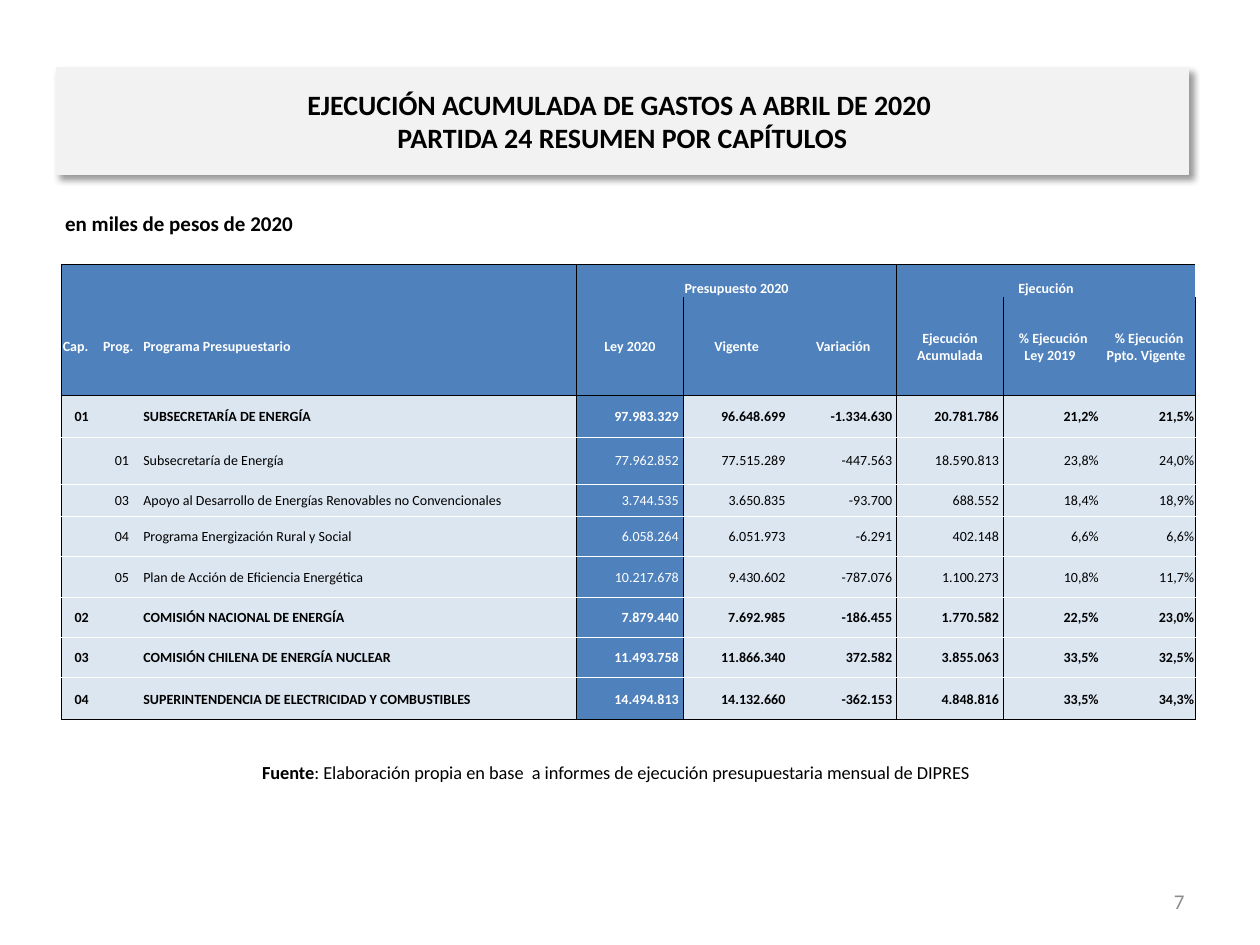
from dataclasses import dataclass

from lxml.etree import SubElement
from pptx import Presentation
from pptx.dml.color import RGBColor as Color
from pptx.enum.shapes import MSO_SHAPE as Shape
from pptx.enum.text import MSO_ANCHOR as Anchor, PP_ALIGN as Align
from pptx.oxml.ns import qn
from pptx.util import Pt


@dataclass(frozen=True)
class Theme:
    font: str = "Calibri"
    black: str = "000000"
    white: str = "FFFFFF"
    grey: str = "8C8C8C"
    panel: str = "F2F2F2"
    blue: str = "4F81BD"
    pale: str = "DCE6F1"
    title: float = 16
    note: float = 12
    source: float = 10.5
    cell: float = 8
    border: float = 0.5


@dataclass(frozen=True)
class Box:
    left: float
    top: float
    width: float
    height: float

    def lengths(self) -> tuple:
        return Pt(self.left), Pt(self.top), Pt(self.width), Pt(self.height)


@dataclass(frozen=True)
class Budget:
    chapter: str
    program: str
    name: str
    figures: str
    height: float

    def texts(self) -> list[str]:
        amounts = self.figures.split()
        padded = [f"{amount} " for amount in amounts[:4]]
        return [self.chapter, self.program, self.name, *padded, *amounts[4:]]


THEME = Theme()
NO_STYLE = "{2D5ABB26-0587-4C30-8999-92F81FD0307C}"
COLUMNS = [23, 23, 248.3, 61, 61, 61, 61, 55.2, 54.5]
HEADER_HEIGHTS = [18.8, 56]
GROUP = 3
LAW_COLUMN = 3
GROUPS = ["", "Presupuesto 2020", "Ejecución"]
HEADINGS = ["Cap.", "Prog.", "Programa Presupuestario", "Ley 2020", "Vigente", "Variación",
            "Ejecución Acumulada", " % Ejecución Ley 2019 ", " % Ejecución Ppto. Vigente "]
BUDGETS = [
    Budget("01", "", "SUBSECRETARÍA DE ENERGÍA",
           "97.983.329 96.648.699 -1.334.630 20.781.786 21,2% 21,5%", 23.8),
    Budget("", "01", "Subsecretaría de Energía",
           "77.962.852 77.515.289 -447.563 18.590.813 23,8% 24,0%", 26.8),
    Budget("", "03", "Apoyo al Desarrollo de Energías Renovables no Convencionales",
           "3.744.535 3.650.835 -93.700 688.552 18,4% 18,9%", 18.4),
    Budget("", "04", "Programa Energización Rural y Social",
           "6.058.264 6.051.973 -6.291 402.148 6,6% 6,6%", 23.1),
    Budget("", "05", "Plan de Acción de Eficiencia Energética",
           "10.217.678 9.430.602 -787.076 1.100.273 10,8% 11,7%", 23.1),
    Budget("02", "", "COMISIÓN NACIONAL DE ENERGÍA",
           "7.879.440 7.692.985 -186.455 1.770.582 22,5% 23,0%", 23.1),
    Budget("03", "", "COMISIÓN CHILENA DE ENERGÍA NUCLEAR",
           "11.493.758 11.866.340 372.582 3.855.063 33,5% 32,5%", 23.1),
    Budget("04", "", "SUPERINTENDENCIA DE ELECTRICIDAD Y COMBUSTIBLES",
           "14.494.813 14.132.660 -362.153 4.848.816 33,5% 34,3%", 24),
]


def style_paragraph(para, size: float, color: str, align: Align, bold: bool = False) -> None:
    para.alignment = align
    para.font.name = THEME.font
    para.font.size = Pt(size)
    para.font.bold = bold
    para.font.color.rgb = Color.from_string(color)


def add_text(page, box: Box, text: str, size: float, color: str,
             align: Align, bold: bool = False, anchor: Anchor = Anchor.TOP):
    frame = page.shapes.add_textbox(*box.lengths()).text_frame
    frame.word_wrap = True
    frame.vertical_anchor = anchor
    para = frame.paragraphs[0]
    para.text = text
    style_paragraph(para, size, color, align, bold)
    return para


def add_title(page, box: Box, text: str) -> None:
    panel = page.shapes.add_shape(Shape.RECTANGLE, *box.lengths())
    panel.fill.solid()
    panel.fill.fore_color.rgb = Color.from_string(THEME.panel)
    panel.line.color.rgb = Color.from_string(THEME.panel)
    panel.line.width = Pt(0.75)
    panel.shadow.inherit = False
    effects = panel._element.spPr.find(qn("a:effectLst"))
    shadow = SubElement(effects, qn("a:outerShdw"), blurRad=str(Pt(4)), dist=str(Pt(3)),
                        dir="2700000", algn="tl", rotWithShape="0")
    shade = SubElement(shadow, qn("a:srgbClr"), val=THEME.black)
    SubElement(shade, qn("a:alpha"), val="40000")
    frame = panel.text_frame
    frame.word_wrap = True
    frame.vertical_anchor = Anchor.MIDDLE
    para = frame.paragraphs[0]
    para.text = text
    style_paragraph(para, THEME.title, THEME.black, Align.CENTER, True)


def set_borders(cell, sides: dict[str, str]) -> None:
    properties = cell._tc.get_or_add_tcPr()
    for position, side in enumerate(side for side in "LRTB" if side in sides):
        line = SubElement(properties, qn(f"a:ln{side}"), w=str(Pt(THEME.border)))
        SubElement(SubElement(line, qn("a:solidFill")), qn("a:srgbClr"), val=sides[side])
        properties.insert(position, line)


def border_sides(row: int, column: int, last_row: int) -> dict[str, str]:
    sides = {}
    if column % GROUP == 0:
        sides["L"] = THEME.black
    if column % GROUP == GROUP - 1:
        sides["R"] = THEME.black
    if row != 1:
        sides["T"] = THEME.black if row in (0, 2) else THEME.white
    if row != 0:
        sides["B"] = THEME.black if row in (1, last_row) else THEME.white
    return sides


def fill_cell(cell, text: str, fill: str, color: str, align: Align,
              bold: bool, anchor: Anchor) -> None:
    cell.margin_left = cell.margin_right = cell.margin_top = Pt(0.7)
    cell.margin_bottom = Pt(0)
    cell.vertical_anchor = anchor
    cell.fill.solid()
    cell.fill.fore_color.rgb = Color.from_string(fill)
    para = cell.text_frame.paragraphs[0]
    para.text = text
    style_paragraph(para, THEME.cell, color, align, bold)


def add_budget_table(page, left: float, top: float) -> None:
    heights = HEADER_HEIGHTS + [budget.height for budget in BUDGETS]
    box = Box(left, top, sum(COLUMNS), sum(heights))
    table = page.shapes.add_table(len(heights), len(COLUMNS), *box.lengths()).table
    table.first_row = table.horz_banding = False
    table._tbl.tblPr.find(qn("a:tableStyleId")).text = NO_STYLE
    for column, width in zip(table.columns, COLUMNS):
        column.width = Pt(width)
    for row, height in zip(table.rows, heights):
        row.height = Pt(height)

    for column in range(len(COLUMNS)):
        group = GROUPS[column // GROUP] if column % GROUP == 0 else ""
        fill_cell(table.cell(0, column), group, THEME.blue, THEME.white,
                  Align.CENTER, True, Anchor.BOTTOM)
        fill_cell(table.cell(1, column), HEADINGS[column], THEME.blue, THEME.white,
                  Align.LEFT if column < GROUP else Align.CENTER, True, Anchor.MIDDLE)

    aligns = [Align.CENTER, Align.CENTER, Align.JUSTIFY] + [Align.RIGHT] * 6
    for row, budget in enumerate(BUDGETS, start=len(HEADER_HEIGHTS)):
        for column, text in enumerate(budget.texts()):
            law = column == LAW_COLUMN
            fill_cell(table.cell(row, column), text, THEME.blue if law else THEME.pale,
                      THEME.white if law else THEME.black, aligns[column],
                      bool(budget.chapter), Anchor.MIDDLE)

    for row in range(len(heights)):
        for column in range(len(COLUMNS)):
            set_borders(table.cell(row, column), border_sides(row, column, len(heights) - 1))
    for start in (GROUP, 2 * GROUP):
        table.cell(0, start).merge(table.cell(0, start + GROUP - 1))


def main() -> None:
    deck = Presentation()
    deck.slide_width, deck.slide_height = Pt(720), Pt(540)
    page = deck.slides.add_slide(deck.slide_layouts[6])
    add_text(page, Box(516.2, 500.4, 167.8, 28.8), "7", THEME.note, THEME.grey,
             Align.RIGHT, anchor=Anchor.MIDDLE)
    source = add_text(page, Box(30.2, 431.3, 643.7, 20.9), "", THEME.source,
                      THEME.black, Align.CENTER)
    label = source.add_run()
    label.text = "Fuente"
    label.font.bold = True
    span = source.add_run()
    span.text = (": Elaboración propia en base  a informes de ejecución "
                 "presupuestaria mensual de DIPRES")
    add_text(page, Box(30.2, 116.6, 540, 26.6), "en miles de pesos de 2020",
             THEME.note, THEME.black, Align.LEFT, True)
    add_title(page, Box(32.4, 38.5, 646.6, 61),
              "EJECUCIÓN ACUMULADA DE GASTOS A ABRIL DE 2020 \vPARTIDA 24 RESUMEN POR CAPÍTULOS")
    add_budget_table(page, 35.2, 151.2)
    deck.save("out.pptx")


if __name__ == "__main__":
    main()
